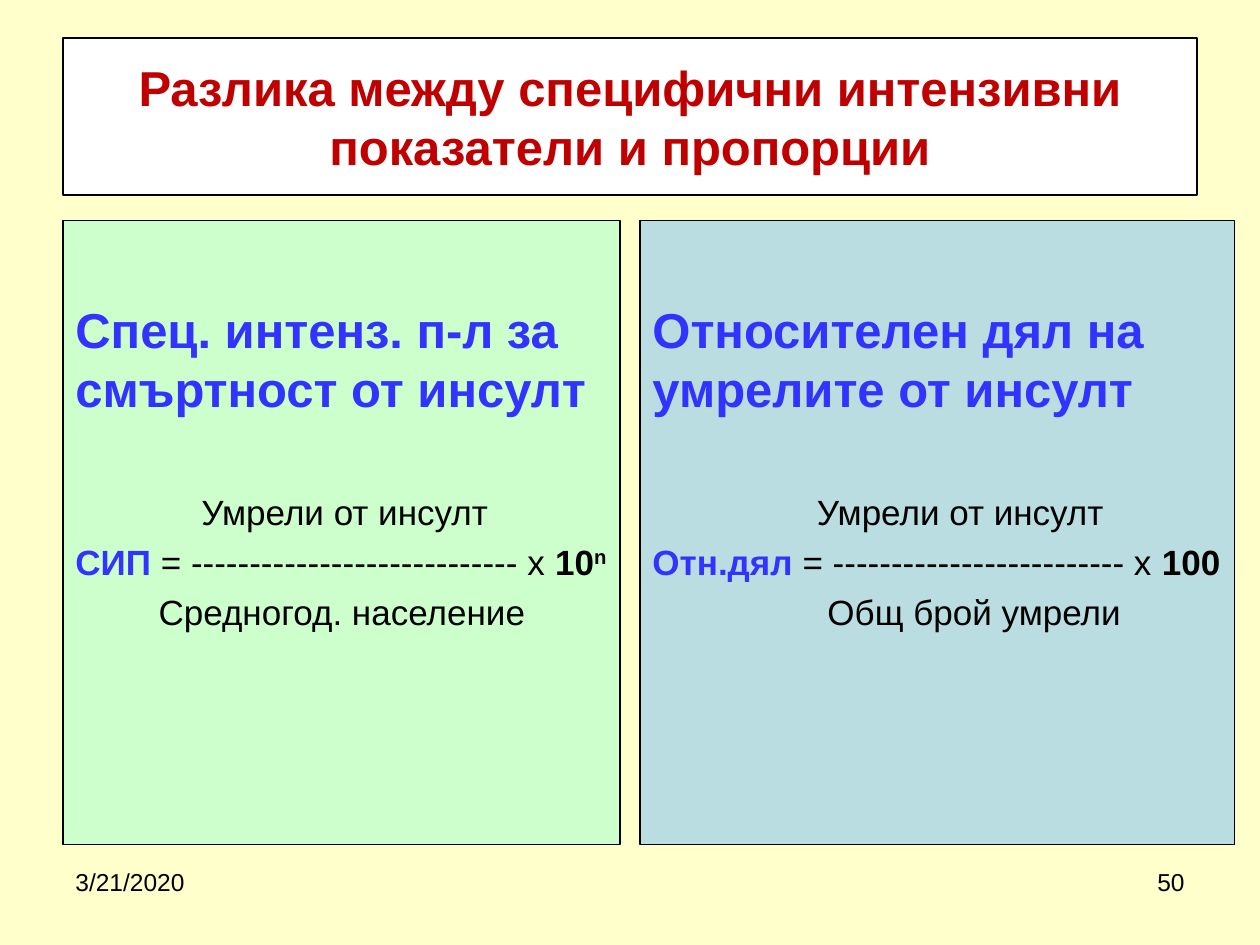
from pptx import Presentation
from pptx.dml.color import RGBColor
from pptx.enum.shapes import MSO_SHAPE as Shape
from pptx.enum.text import MSO_ANCHOR as Anchor, PP_ALIGN as Align
from pptx.util import Pt

BLACK, BLUE, RED = "000000", "3333FF", "C00000"


def color(value):
    """Turn a hex string into a colour."""
    return RGBColor.from_string(value)


def apply_format(target, values):
    """Set every attribute named in a dict."""
    for name, value in values.items():
        setattr(target, name, value)


def add_panel(page, place, fill, line_width, frame_format):
    """Add an outlined rectangle and return its text frame."""
    box = page.shapes.add_shape(Shape.RECTANGLE, *map(Pt, place))
    box.shadow.inherit = False
    box.fill.solid()
    box.fill.fore_color.rgb = color(fill)
    box.line.color.rgb = color(BLACK)
    box.line.width = Pt(line_width)
    apply_format(box.text_frame, {"word_wrap": True, **frame_format})
    return box.text_frame


def add_span(para, text, size, shade=BLACK, bold=False, raised=False):
    """Add one run of formatted text."""
    span = para.add_run()
    span.text = text
    apply_format(span.font, {"name": "Arial", "size": Pt(size), "bold": bold})
    span.font.color.rgb = color(shade)
    if raised:
        span._r.get_or_add_rPr().set("baseline", "30000")


def add_formula_line(frame, spans, before=4.5, indent=0):
    """Add one indented line of a formula."""
    para = frame.add_paragraph()
    apply_format(para, {"alignment": Align.LEFT, "space_before": Pt(before)})
    para._p.get_or_add_pPr().set("marL", str(Pt(indent)))
    for text, *style in spans:
        add_span(para, text, 20, *style)


def add_indicator(page, left, width, fill, heading, top_part, middle, bottom_part):
    """Add a panel with a heading and a fraction below it."""
    frame = add_panel(page, (left, 126, width, 356.5), fill, 0.75, {
        "vertical_anchor": Anchor.TOP, "margin_top": Pt(45), "margin_right": 0})
    para = frame.paragraphs[0]
    para.alignment = Align.LEFT
    add_span(para, heading, 28, BLUE, True)
    (top_text, top_indent), (bottom_text, bottom_indent) = top_part, bottom_part
    add_formula_line(frame, [(top_text,)], 42, top_indent)
    add_formula_line(frame, middle)
    add_formula_line(frame, [(bottom_text,)], indent=bottom_indent)


def add_footer(page, left, text, alignment):
    """Add a small text box at the bottom of the page."""
    box = page.shapes.add_textbox(Pt(left), Pt(492), Pt(168), Pt(37.5))
    box.text_frame.word_wrap = True
    para = box.text_frame.paragraphs[0]
    para.alignment = alignment
    add_span(para, text, 14)


def main():
    """Build the slide and save it."""
    deck = Presentation()
    apply_format(deck, {"slide_width": Pt(720), "slide_height": Pt(540)})
    page = deck.slides.add_slide(deck.slide_layouts[6])
    page.background.fill.solid()
    page.background.fill.fore_color.rgb = color("FFFFCC")

    title = add_panel(page, (36, 21.6, 648, 90), "FFFFFF", 1,
                      {"vertical_anchor": Anchor.MIDDLE})
    title.paragraphs[0].alignment = Align.CENTER
    add_span(title.paragraphs[0],
             "Разлика между специфични интензивни показатели и пропорции",
             28, RED, True)

    add_indicator(
        page, 36, 318.25, "CCFFCC", "Спец. интенз. п-л за смъртност от инсулт",
        ("Умрели от инсулт", 72),
        [("СИП", BLUE, True), (" = ---------------------------- х",),
         (" 10", BLACK, True), ("n", BLACK, True, True)],
        ("Средногод. население", 47.5))
    add_indicator(
        page, 365.75, 339.85, "BADDE1", "Относителен дял на умрелите от инсулт",
        ("Умрели от инсулт", 94),
        [("Отн.дял", BLUE, True), (" = ------------------------- х ",),
         ("100", BLACK, True)],
        ("Общ брой умрели", 100))

    add_footer(page, 516, "50", Align.RIGHT)
    add_footer(page, 36, "3/21/2020", Align.LEFT)
    deck.save("out.pptx")


if __name__ == "__main__":
    main()
